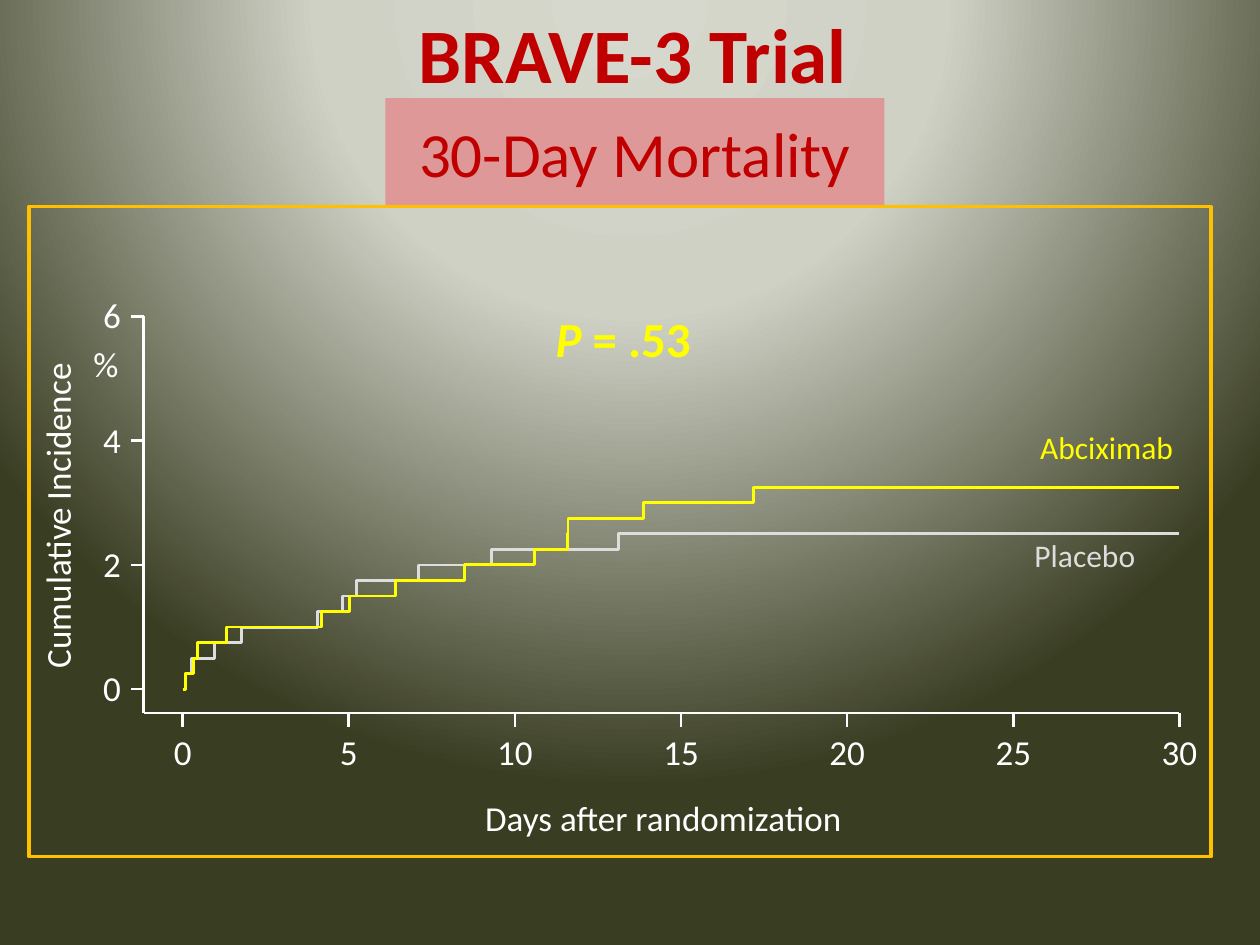
"""Build the BRAVE-3 slide with its 30-day mortality curves."""
from dataclasses import dataclass

from pptx import Presentation
from pptx.dml.color import RGBColor
from pptx.enum.shapes import MSO_CONNECTOR, MSO_SHAPE
from pptx.enum.text import MSO_ANCHOR, MSO_AUTO_SIZE, PP_ALIGN
from pptx.oxml import parse_xml
from pptx.oxml.ns import nsdecls
from pptx.util import Inches, Pt

STRAIGHT, RECTANGLE = MSO_CONNECTOR.STRAIGHT, MSO_SHAPE.RECTANGLE
TOP, MIDDLE = MSO_ANCHOR.TOP, MSO_ANCHOR.MIDDLE
LEFT, CENTER, RIGHT = PP_ALIGN.LEFT, PP_ALIGN.CENTER, PP_ALIGN.RIGHT
NO_AUTOFIT = MSO_AUTO_SIZE.NONE


@dataclass(frozen=True)
class Theme:
    """Colours, font and type sizes of the slide."""
    font: str = "Calibri"
    red: str = "C00000"
    pink: str = "DE9898"
    white: str = "FFFFFF"
    yellow: str = "FFFF00"
    grey: str = "DDDDDD"
    amber: str = "FFC000"
    backdrop: tuple = ((0, "D6D8CD"), (40, "CFD1C5"), (100, "393D22"))
    title: int = 44
    subtitle: int = 36
    result: int = 28
    axis: int = 20
    series: int = 18


THEME = Theme()
PADDED, TIGHT = (0.25, 0.13), (0, 0)
DAY_ZERO, DAY_WIDTH, LAST_DAY = 1.45, 0.2637, 30
PERCENT_ZERO, PERCENT_HEIGHT, STEP = 5.47, 0.493, 0.25
AXIS_X, AXIS_Y, AXIS_TOP = 1.14, 5.66, 2.51
LABEL_HEIGHT = 0.33
PLACEBO_DAYS = (0.08, 0.27, 0.95, 1.78, 4.06, 4.82, 5.23, 7.09, 9.29, 13.12)
ABCIXIMAB_DAYS = (0.08, 0.34, 0.46, 1.33, 4.17, 5.01, 6.41, 8.49, 10.58,
                  11.58, 11.6, 13.88, 17.18)


def day_x(day):
    """Return the horizontal place of a day."""
    return DAY_ZERO + day * DAY_WIDTH


def percent_y(percent):
    """Return the vertical place of an incidence."""
    return PERCENT_ZERO - percent * PERCENT_HEIGHT


def set_background(slide):
    """Give the slide its circular gradient."""
    stops = "".join(
        f'<a:gs pos="{position * 1000}"><a:srgbClr val="{color}"/></a:gs>'
        for position, color in THEME.backdrop)
    slide.element.cSld.insert(0, parse_xml(
        f'<p:bg {nsdecls("p", "a")}><p:bgPr><a:gradFill rotWithShape="1">'
        f'<a:gsLst>{stops}</a:gsLst><a:path path="circle">'
        '<a:fillToRect l="50000" t="-80000" r="50000" b="180000"/></a:path>'
        '</a:gradFill><a:effectLst/></p:bgPr></p:bg>'))


def write(shape, text, size, color, align=LEFT, bold=False, padding=TIGHT,
          anchor=TOP):
    """Fill a shape with one formatted line and return its paragraph."""
    frame = shape.text_frame
    frame.auto_size = NO_AUTOFIT
    frame.word_wrap = False
    frame.vertical_anchor = anchor
    frame.margin_left = frame.margin_right = Inches(padding[0])
    frame.margin_top = frame.margin_bottom = Inches(padding[1])
    paragraph = frame.paragraphs[0]
    paragraph.text = text
    paragraph.alignment = align
    font = paragraph.font
    font.name, font.size, font.bold = THEME.font, Pt(size), bold
    font.color.rgb = RGBColor.from_string(color)
    return paragraph


def add_label(slide, box, text, size=THEME.axis, color=THEME.white, **style):
    """Add a text box and return it."""
    label = slide.shapes.add_textbox(*map(Inches, box))
    write(label, text, size, color, **style)
    return label


def set_line(shape, color, width):
    """Set the colour and width of an outline."""
    shape.line.color.rgb = RGBColor.from_string(color)
    shape.line.width = Pt(width)


def add_axis_line(slide, *ends):
    """Add a white axis line or tick."""
    line = slide.shapes.add_connector(STRAIGHT, *map(Inches, ends))
    set_line(line, THEME.white, 1.5)
    line.element.spPr.append(parse_xml(f'<a:effectLst {nsdecls("a")}/>'))


def add_curve(slide, event_days, color):
    """Add a step curve that rises by one step at each event."""
    points = []
    for count, day in enumerate(event_days):
        points += [(day, count * STEP), (day, (count + 1) * STEP)]
    points.append((LAST_DAY, len(event_days) * STEP))
    builder = slide.shapes.build_freeform(
        Inches(day_x(0)), Inches(percent_y(0)))
    builder.add_line_segments(
        [(Inches(day_x(day)), Inches(percent_y(percent)))
         for day, percent in points], close=False)
    curve = builder.convert_to_shape()
    curve.shadow.inherit = False
    curve.fill.background()
    set_line(curve, color, 1.63)


def add_axes(slide):
    """Add both axes with ticks, numbers and captions."""
    add_axis_line(slide, AXIS_X, AXIS_Y, day_x(LAST_DAY), AXIS_Y)
    add_axis_line(slide, AXIS_X, AXIS_TOP, AXIS_X, AXIS_Y)
    for percent in range(0, 7, 2):
        y = percent_y(percent)
        add_axis_line(slide, AXIS_X, y, AXIS_X - 0.1, y)
        add_label(slide, (0.81, y - 0.18, 0.15, LABEL_HEIGHT), str(percent),
                  align=RIGHT)
    for day in range(0, LAST_DAY + 1, 5):
        x = day_x(day)
        add_axis_line(slide, x, AXIS_Y, x, AXIS_Y + 0.11)
        width = 0.15 * len(str(day))
        add_label(slide, (x - width / 2, 5.8, width, LABEL_HEIGHT), str(day),
                  align=CENTER)
    add_label(slide, (3.85, 6.32, 3.09, LABEL_HEIGHT),
              "Days after randomization")
    incidence = add_label(slide, (-0.88, 3.81, 2.66, LABEL_HEIGHT),
                          "Cumulative Incidence")
    incidence.rotation = 270
    add_label(slide, (0.49, 2.59, 0.75, 0.59), "%", padding=PADDED)


def add_headings(slide):
    """Place the title and the banner below it."""
    title = slide.shapes.title
    title.left, title.top, title.width, title.height = map(
        Inches, (3.05, -0.08, 3.95, 1.33))
    write(title, "BRAVE-3 Trial", THEME.title, THEME.red, CENTER, True, PADDED)
    banner = slide.shapes.add_shape(
        RECTANGLE, *map(Inches, (3.06, 0.78, 3.96, 0.86)))
    banner.shadow.inherit = False
    banner.fill.solid()
    banner.fill.fore_color.rgb = RGBColor.from_string(THEME.pink)
    banner.line.fill.background()
    write(banner, "30-Day Mortality", THEME.subtitle, THEME.red, CENTER,
          padding=PADDED, anchor=MIDDLE)


def add_result(slide):
    """Add the P value with its italic symbol."""
    result = add_label(slide, (4.16, 2.32, 1.6, 0.73), "P ", THEME.result,
                       THEME.yellow, bold=True, padding=PADDED)
    paragraph = result.text_frame.paragraphs[0]
    paragraph.runs[0].font.italic = True
    paragraph.add_run().text = "= .53"


def add_frame(slide):
    """Outline the plot area."""
    frame = slide.shapes.add_shape(
        RECTANGLE, *map(Inches, (0.23, 1.64, 9.38, 5.16)))
    frame.shadow.inherit = False
    frame.fill.background()
    set_line(frame, THEME.amber, 2)


def main():
    """Build and save the slide."""
    deck = Presentation()
    deck.slide_width, deck.slide_height = Inches(10), Inches(7.5)
    slide = deck.slides.add_slide(deck.slide_layouts[5])
    set_background(slide)
    add_headings(slide)
    add_curve(slide, PLACEBO_DAYS, THEME.grey)
    add_curve(slide, ABCIXIMAB_DAYS, THEME.yellow)
    add_axes(slide)
    add_label(slide, (7.52, 3.27, 2.04, 0.65), "Abciximab", THEME.series,
              THEME.yellow, align=RIGHT, padding=PADDED)
    add_label(slide, (7.55, 4.12, 1.71, 0.65), "Placebo", THEME.series,
              THEME.grey, align=RIGHT, padding=PADDED)
    add_result(slide)
    add_frame(slide)
    deck.save("out.pptx")


if __name__ == "__main__":
    main()
